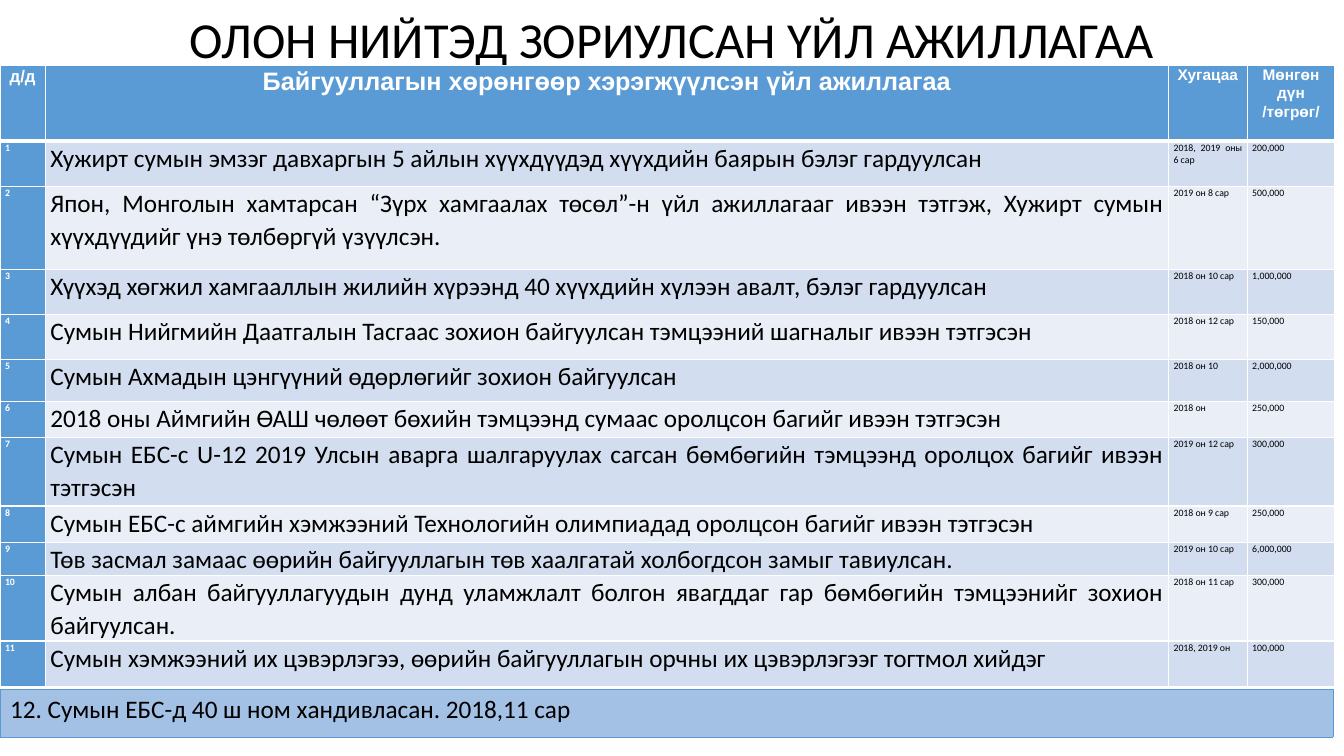
from dataclasses import dataclass

from lxml import etree
from pptx import Presentation
from pptx.dml.color import RGBColor
from pptx.enum.text import MSO_ANCHOR, PP_ALIGN
from pptx.oxml.ns import qn
from pptx.util import Inches, Pt

CENTER, LEFT, JUSTIFY = PP_ALIGN.CENTER, PP_ALIGN.LEFT, PP_ALIGN.JUSTIFY
MIDDLE = MSO_ANCHOR.MIDDLE
TITLE_ONLY = 5


@dataclass(frozen=True)
class Theme:
    head: str = "Arial"
    body: str = "Calibri"
    black: str = "000000"
    white: str = "FFFFFF"
    blue: str = "5B9BD5"
    odd: str = "D2DEEF"
    even: str = "EAEFF7"
    note: str = "A3C0E5"
    title: int = 36
    text: int = 18
    label: int = 12
    side: int = 11
    small: int = 7


THEME = Theme()
TITLE = "ОЛОН НИЙТЭД ЗОРИУЛСАН ҮЙЛ АЖИЛЛАГАА"
NOTE = "12. Сумын ЕБС-д 40 ш ном хандивласан. 2018,11 сар"
WIDTHS = [0.45, 11.14, 0.78, 0.87]
HEAD_HEIGHT = 0.75
HEADS = [
    ("д/д", THEME.label),
    ("Байгууллагын хөрөнгөөр хэрэгжүүлсэн үйл ажиллагаа", THEME.text),
    ("Хугацаа", THEME.side),
    ("Мөнгөн дүн /төгрөг/", THEME.side),
]
# Row height, activity, date, amount
EVENTS = [
    (0.45, "Хужирт сумын эмзэг давхаргын 5 айлын хүүхдүүдэд хүүхдийн баярын бэлэг гардуулсан",
     "2018, 2019 оны 6 сар", "200,000"),
    (0.82, "Япон, Монголын хамтарсан “Зүрх хамгаалах төсөл”-н үйл ажиллагааг ивээн тэтгэж, "
     "Хужирт сумын хүүхдүүдийг үнэ төлбөргүй үзүүлсэн.", "2019 он 8 сар", "500,000"),
    (0.45, "Хүүхэд хөгжил хамгааллын жилийн хүрээнд 40 хүүхдийн хүлээн авалт, бэлэг гардуулсан",
     "2018 он 10 сар", "1,000,000"),
    (0.45, "Сумын Нийгмийн Даатгалын Тасгаас зохион байгуулсан тэмцээний шагналыг ивээн тэтгэсэн",
     "2018 он 12 сар", "150,000"),
    (0.41, "Сумын Ахмадын цэнгүүний өдөрлөгийг зохион байгуулсан",
     "2018 он 10", "2,000,000"),
    (0.36, "2018 оны Аймгийн ӨАШ чөлөөт бөхийн тэмцээнд сумаас оролцсон багийг ивээн тэтгэсэн",
     "2018 он", "250,000"),
    (0.68, "Сумын ЕБС-с U-12 2019 Улсын аварга шалгаруулах сагсан бөмбөгийн тэмцээнд "
     "оролцох багийг ивээн тэтгэсэн", "2019 он 12 сар", "300,000"),
    (0.36, "Сумын ЕБС-с аймгийн хэмжээний Технологийн олимпиадад оролцсон багийг ивээн тэтгэсэн",
     "2018 он 9 сар", "250,000"),
    (0.31, "Төв засмал замаас өөрийн байгууллагын төв хаалгатай холбогдсон замыг тавиулсан.",
     "2019 он 10 сар", "6,000,000"),
    (0.65, "Сумын албан байгууллагуудын дунд уламжлалт болгон явагддаг гар бөмбөгийн тэмцээнийг "
     "зохион байгуулсан.", "2018 он 11 сар", "300,000"),
    (0.45, "Сумын хэмжээний их цэвэрлэгээ, өөрийн байгууллагын орчны их цэвэрлэгээг тогтмол хийдэг",
     "2018, 2019 он", "100,000"),
]


def write(frame, text, size, align, space, font=THEME.body, color=THEME.black, bold=False):
    frame.text = text
    para = frame.paragraphs[0]
    para.alignment = align
    para.line_spacing = space
    face = para.runs[0].font
    face.name, face.size, face.bold = font, Pt(size), bold
    face.color.rgb = RGBColor.from_string(color)


def paint(cell, fill, line, width, base):
    """Set the cell's borders, with its own width at the base, and then its fill."""
    props = cell._tc.get_or_add_tcPr()
    for side in "LRTB":
        size = base if side == "B" else width
        edge = etree.SubElement(props, qn(f"a:ln{side}"), w=str(Pt(size)))
        solid = etree.SubElement(edge, qn("a:solidFill"))
        etree.SubElement(solid, qn("a:srgbClr"), val=line)
    cell.fill.solid()
    cell.fill.fore_color.rgb = RGBColor.from_string(fill)


def add_grid(slide, left, top, widths, heights):
    frame = slide.shapes.add_table(
        len(heights), len(widths), Inches(left), Inches(top),
        Inches(sum(widths)), Inches(sum(heights)))
    table = frame.table
    table.first_row = table.horz_banding = False
    for col, width in zip(table.columns, widths):
        col.width = Inches(width)
    for row, height in zip(table.rows, heights):
        row.height = Inches(height)
    return table


def fill_cell(cell, text, size, fill, align=JUSTIFY, base=1, **style):
    cell.margin_left = cell.margin_right = Inches(0.05)
    cell.margin_top = cell.margin_bottom = 0
    write(cell.text_frame, text, size, align, 1.07, **style)
    paint(cell, fill, THEME.white, 1, base)


def add_title(slide):
    title = slide.shapes.title
    title.left, title.top = Inches(0), Inches(0)
    title.width, title.height = Inches(13.33), Inches(0.83)
    title.text_frame.vertical_anchor = MIDDLE
    write(title.text_frame, TITLE, THEME.title, CENTER, 0.9)


def add_events(slide):
    heights = [HEAD_HEIGHT] + [event[0] for event in EVENTS]
    table = add_grid(slide, 0, 0.65, WIDTHS, heights)
    for col, (text, size) in enumerate(HEADS):
        fill_cell(table.cell(0, col), text, size, THEME.blue, CENTER, base=3,
                  font=THEME.head, color=THEME.white, bold=True)
    for row, (_, task, date, sum_text) in enumerate(EVENTS, 1):
        band = THEME.odd if row % 2 else THEME.even
        fill_cell(table.cell(row, 0), str(row), THEME.small, THEME.blue,
                  color=THEME.white, bold=True)
        fill_cell(table.cell(row, 1), task, THEME.text, band)
        fill_cell(table.cell(row, 2), date, THEME.small, band)
        fill_cell(table.cell(row, 3), sum_text, THEME.small, band)


def add_note(slide):
    cell = add_grid(slide, 0, 6.84, [13.22], [0.47]).cell(0, 0)
    write(cell.text_frame, NOTE, THEME.text, LEFT, 1.0)
    paint(cell, THEME.note, THEME.blue, 0.5, 0.5)


def main():
    deck = Presentation()
    deck.slide_width, deck.slide_height = Inches(13.33), Inches(7.5)
    slide = deck.slides.add_slide(deck.slide_layouts[TITLE_ONLY])
    add_title(slide)
    add_events(slide)
    add_note(slide)
    deck.save("out.pptx")


if __name__ == "__main__":
    main()
